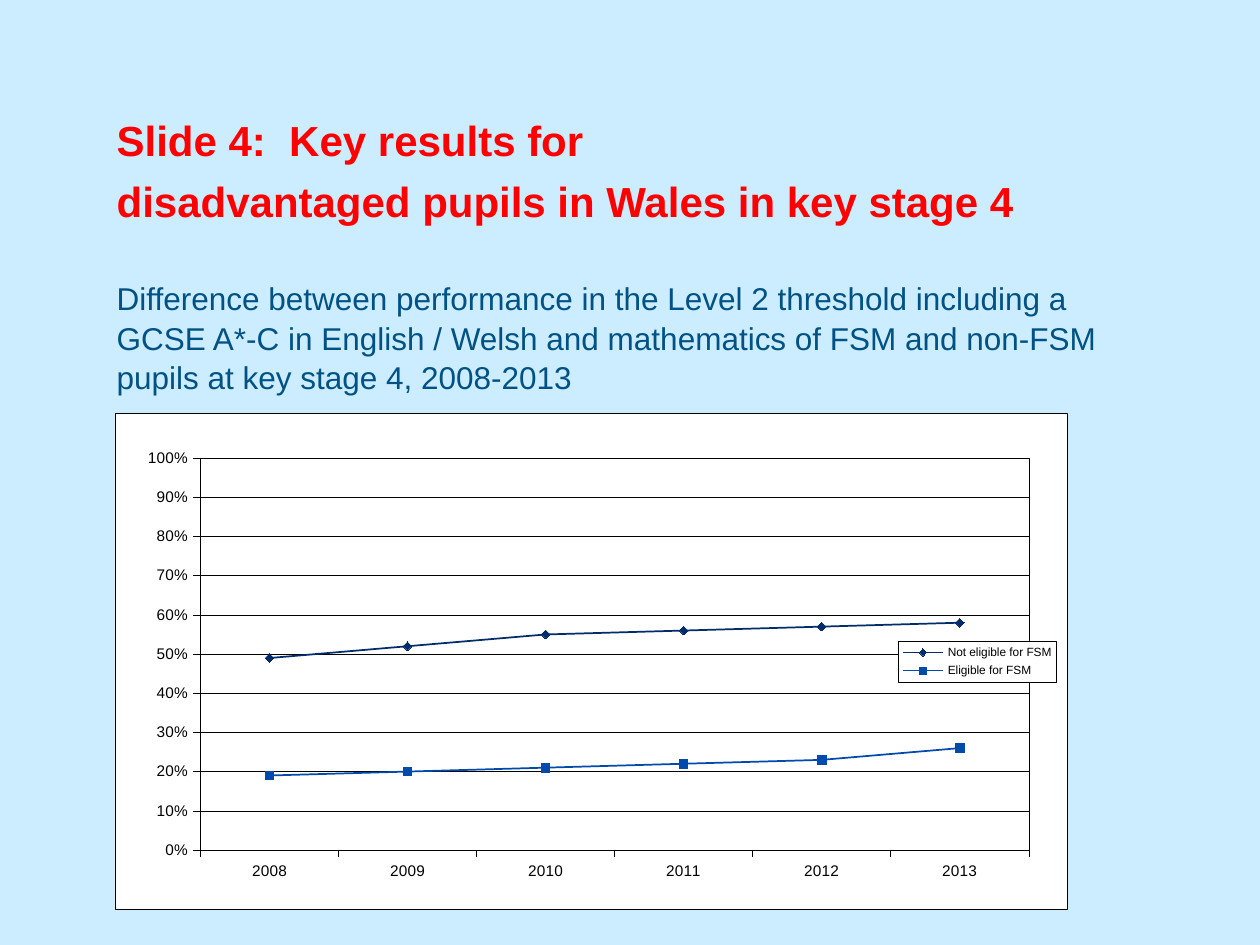
from lxml import etree
from pptx import Presentation
from pptx import util as u
from pptx.chart import data
from pptx.dml.color import RGBColor
from pptx.enum import chart as ch, text
from pptx.oxml import ns

Pt = u.Pt
BLACK, WHITE, RED, TEAL = "000000", "FFFFFF", "FF0000", "015284"
HAIR = 0.25


def rgb(code):
    return RGBColor.from_string(code)


def frame():
    """Shape properties: white fill with a thin black border."""
    return etree.fromstring(
        f'<c:spPr {ns.nsdecls("c", "a")}>'
        f'<a:solidFill><a:srgbClr val="{WHITE}"/></a:solidFill>'
        f'<a:ln w="{Pt(HAIR)}"><a:solidFill><a:srgbClr val="{BLACK}"/>'
        '</a:solidFill></a:ln></c:spPr>')


def layout(x, y, w, h, inner=False):
    """Manual layout in fractions of the chart."""
    vals = [("xMode", "edge"), ("yMode", "edge"),
            ("x", x), ("y", y), ("w", w), ("h", h)]
    if inner:
        vals.insert(0, ("layoutTarget", "inner"))
    body = "".join(f'<c:{tag} val="{val}"/>' for tag, val in vals)
    return etree.fromstring(
        f'<c:layout {ns.nsdecls("c")}><c:manualLayout>{body}'
        '</c:manualLayout></c:layout>')


class Deck:
    def __init__(self, wide, high, back, face):
        self.prs = Presentation()
        self.prs.slide_width, self.prs.slide_height = Pt(wide), Pt(high)
        self.slide = self.prs.slides.add_slide(self.prs.slide_layouts[6])
        fill = self.slide.background.fill
        fill.solid()
        fill.fore_color.rgb = rgb(back)
        self.face = face

    def font(self, font, size, color, bold=False):
        font.name, font.size, font.bold = self.face, Pt(size), bold
        font.color.rgb = rgb(color)

    def line(self, line, color, width):
        line.color.rgb, line.width = rgb(color), Pt(width)

    def text(self, x, y, w, h, paras):
        box = self.slide.shapes.add_textbox(Pt(x), Pt(y), Pt(w), Pt(h))
        body = box.text_frame
        body.word_wrap = True
        body.auto_size = text.MSO_AUTO_SIZE.NONE
        for i, (words, size, color, bold, gap) in enumerate(paras):
            para = body.add_paragraph() if i else body.paragraphs[0]
            para.line_spacing = 1.05
            para.space_before = Pt(gap)
            run = para.add_run()
            run.text = words
            self.font(run.font, size, color, bold)

    def axis(self, axis, size):
        self.font(axis.tick_labels.font, size, BLACK)
        self.line(axis.format.line, BLACK, HAIR)
        axis.major_tick_mark = ch.XL_TICK_MARK.OUTSIDE
        axis.minor_tick_mark = ch.XL_TICK_MARK.NONE

    def chart(self, x, y, w, h, cats, rows, size):
        info = data.CategoryChartData(number_format="0%")
        info.categories = cats
        for name, vals, *_ in rows:
            info.add_series(name, vals)
        chart = self.slide.shapes.add_chart(
            ch.XL_CHART_TYPE.LINE_MARKERS,
            Pt(x), Pt(y), Pt(w), Pt(h), info).chart
        self.font(chart.font, size, BLACK)
        chart.has_title = False
        chart.plots[0].vary_by_categories = False

        # Axes and gridlines
        self.axis(chart.category_axis, size)
        val = chart.value_axis
        self.axis(val, size)
        val.minimum_scale, val.maximum_scale, val.major_unit = 0, 1, 0.1
        val.tick_labels.number_format = "0%"
        val.tick_labels.number_format_is_linked = False
        self.line(val.major_gridlines.format.line, BLACK, HAIR)

        # Series
        for ser, (_, _, color, mark) in zip(chart.plots[0].series, rows):
            ser.smooth = False
            self.line(ser.format.line, color, 1)
            ser.marker.style, ser.marker.size = mark, 5
            ser.marker.format.fill.solid()
            ser.marker.format.fill.fore_color.rgb = rgb(color)
            self.line(ser.marker.format.line, color, HAIR)
        return chart

    def legend(self, chart, place, size):
        chart.has_legend = True
        key = chart.legend
        key.position = ch.XL_LEGEND_POSITION.RIGHT
        key.include_in_layout = False
        self.font(key.font, size, BLACK)
        root = chart.element.find(".//" + ns.qn("c:legend"))
        root.find(ns.qn("c:legendPos")).addnext(layout(*place))
        root.find(ns.qn("c:txPr")).addprevious(frame())

    def panel(self, chart, place):
        """Frame the chart and the plot, and place the plot."""
        root = chart.element
        root.find(ns.qn("c:txPr")).addprevious(frame())
        plot = root.find(".//" + ns.qn("c:plotArea"))
        for old in plot.findall(ns.qn("c:layout")):
            plot.remove(old)
        plot.insert(0, layout(*place, inner=True))
        plot.append(frame())


def main():
    deck = Deck(720, 540, "CCECFF", "Arial")

    # Title and description
    deck.text(59.6, 60.5, 612, 170, [
        ("Slide 4:  Key results for", 24, RED, True, 0),
        ("disadvantaged pupils in Wales in key stage 4", 24, RED, True, 4.8),
        ("Difference between performance in the Level 2 threshold "
         "including a GCSE A*-C in English / Welsh and mathematics of FSM "
         "and non-FSM pupils at key stage 4, 2008-2013",
         18, TEAL, False, 29),
    ])

    # Results by year
    mark = ch.XL_MARKER_STYLE
    chart = deck.chart(
        65.5, 236.2, 544.3, 283.7, [str(year) for year in range(2008, 2014)],
        [("Not eligible for FSM", (0.49, 0.52, 0.55, 0.56, 0.57, 0.58),
          "002D6A", mark.DIAMOND),
         ("Eligible for FSM", (0.19, 0.2, 0.21, 0.22, 0.23, 0.26),
          "004AAC", mark.SQUARE)], 8.8)
    deck.legend(chart, (0.62, 0.2, 0.27, 0.12), 6.8)
    deck.panel(chart, (0.09, 0.09, 0.87, 0.79))

    deck.prs.save("out.pptx")


if __name__ == "__main__":
    main()
